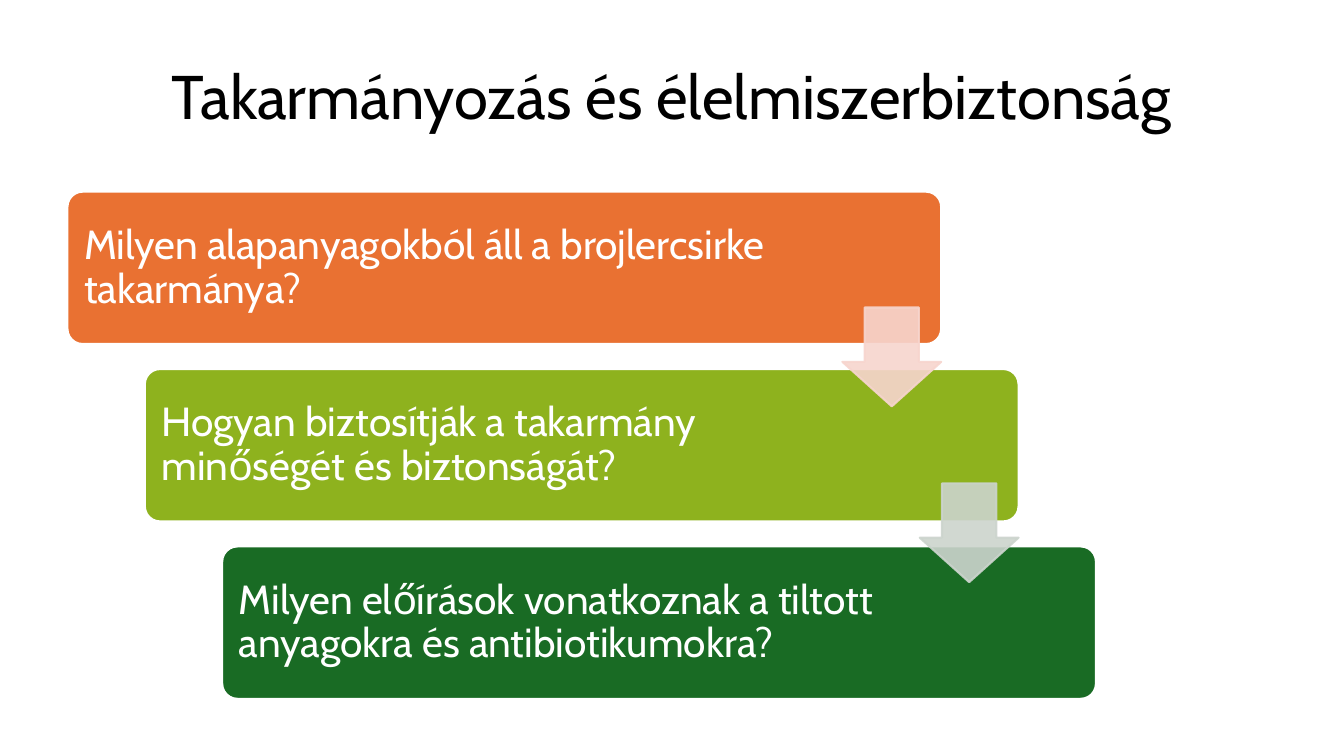
from dataclasses import dataclass

from lxml.etree import SubElement
from pptx import Presentation
from pptx.dml.color import RGBColor
from pptx.enum.shapes import MSO_SHAPE
from pptx.enum.text import MSO_ANCHOR, PP_ALIGN
from pptx.oxml.ns import qn
from pptx.shapes.autoshape import Shape
from pptx.slide import Slide
from pptx.util import Cm, Pt


@dataclass(frozen=True)
class Theme:
    font: str = "Cabin"
    title_size: float = 44
    question_size: float = 29
    outline_width: float = 1.5
    line_spacing: float = 0.9
    arrow_opacity: int = 90
    black: str = "000000"
    white: str = "FFFFFF"
    orange: str = "E97132"
    lime: str = "8EB21E"
    green: str = "196B24"
    pale_orange: str = "F7D5CE"
    pale_green: str = "CCD4CD"


@dataclass(frozen=True)
class Area:
    left: float
    top: float
    width: float
    height: float

    def stepped(self, across: float, down: float) -> "Area":
        return Area(self.left + across, self.top + down, self.width, self.height)


@dataclass(frozen=True)
class Question:
    text: str
    fill: str
    text_width: float


THEME = Theme()
STEP_ACROSS = 1.95
CARD_STEP_DOWN = 4.47
ARROW_STEP_DOWN = 4.43
TEXT_OFFSET = 0.12
TEXT_HEIGHT = 3.61
TEXT_INSET = 0.3
TITLE_AREA = Area(1.83, 0.71, 30.2, 2.77)
FIRST_CARD = Area(1.7, 4.83, 22.02, 3.84)
FIRST_ARROW = Area(21.23, 7.75, 2.49, 2.49)

QUESTIONS = [
    Question("Milyen alapanyagokból áll a brojlercsirke takarmánya?", THEME.orange, 17.88),
    Question("Hogyan biztosítják a takarmány minőségét és biztonságát?", THEME.lime, 17.35),
    Question(
        "Milyen előírások vonatkoznak a tiltott anyagokra és antibiotikumokra?",
        THEME.green,
        17.35,
    ),
]
ARROW_COLORS = [THEME.pale_orange, THEME.pale_green]


def add_text(
    page: Slide,
    area: Area,
    text: str,
    size: float,
    color: str,
    align: PP_ALIGN,
    anchor: MSO_ANCHOR,
    side_inset: float,
    end_inset: float,
) -> None:
    box = page.shapes.add_textbox(
        Cm(area.left), Cm(area.top), Cm(area.width), Cm(area.height)
    )
    frame = box.text_frame
    frame.word_wrap = True
    frame.vertical_anchor = anchor
    frame.margin_left = frame.margin_right = Cm(side_inset)
    frame.margin_top = frame.margin_bottom = Cm(end_inset)
    para = frame.paragraphs[0]
    para.text = text
    para.alignment = align
    para.line_spacing = THEME.line_spacing
    para.font.name = THEME.font
    para.font.size = Pt(size)
    para.font.color.rgb = RGBColor.from_string(color)


def add_block(
    page: Slide,
    preset: MSO_SHAPE,
    area: Area,
    adjustments: list[float],
    fill: str,
    line: str,
) -> Shape:
    block = page.shapes.add_shape(
        preset, Cm(area.left), Cm(area.top), Cm(area.width), Cm(area.height)
    )
    block.shadow.inherit = False
    for index, value in enumerate(adjustments):
        block.adjustments[index] = value
    block.fill.solid()
    block.fill.fore_color.rgb = RGBColor.from_string(fill)
    block.line.color.rgb = RGBColor.from_string(line)
    block.line.width = Pt(THEME.outline_width)
    return block


def set_opacity(block: Shape, percent: int) -> None:
    properties = block.element.spPr
    for color in properties.iter(qn("a:srgbClr")):
        SubElement(color, qn("a:alpha"), val=str(percent * 1000))


def add_question(page: Slide, index: int, question: Question) -> None:
    card = FIRST_CARD.stepped(index * STEP_ACROSS, index * CARD_STEP_DOWN)
    add_block(
        page, MSO_SHAPE.ROUNDED_RECTANGLE, card, [0.1], question.fill, THEME.white
    )
    text_area = Area(
        card.left + TEXT_OFFSET, card.top + TEXT_OFFSET, question.text_width, TEXT_HEIGHT
    )
    add_text(
        page, text_area, question.text, THEME.question_size, THEME.white,
        PP_ALIGN.LEFT, MSO_ANCHOR.MIDDLE, TEXT_INSET, TEXT_INSET,
    )


def add_arrow(page: Slide, index: int, color: str) -> None:
    area = FIRST_ARROW.stepped(index * STEP_ACROSS, index * ARROW_STEP_DOWN)
    arrow = add_block(page, MSO_SHAPE.DOWN_ARROW, area, [0.55, 0.45], color, color)
    set_opacity(arrow, THEME.arrow_opacity)


def main() -> None:
    deck = Presentation()
    deck.slide_width = Cm(33.87)
    deck.slide_height = Cm(19.05)
    page = deck.slides.add_slide(deck.slide_layouts[6])
    add_text(
        page, TITLE_AREA, "Takarmányozás és élelmiszerbiztonság", THEME.title_size,
        THEME.black, PP_ALIGN.CENTER, MSO_ANCHOR.BOTTOM, 0.25, 0.13,
    )
    for index, question in enumerate(QUESTIONS):
        add_question(page, index, question)
    for index, color in enumerate(ARROW_COLORS):
        add_arrow(page, index, color)
    deck.save("out.pptx")


if __name__ == "__main__":
    main()
